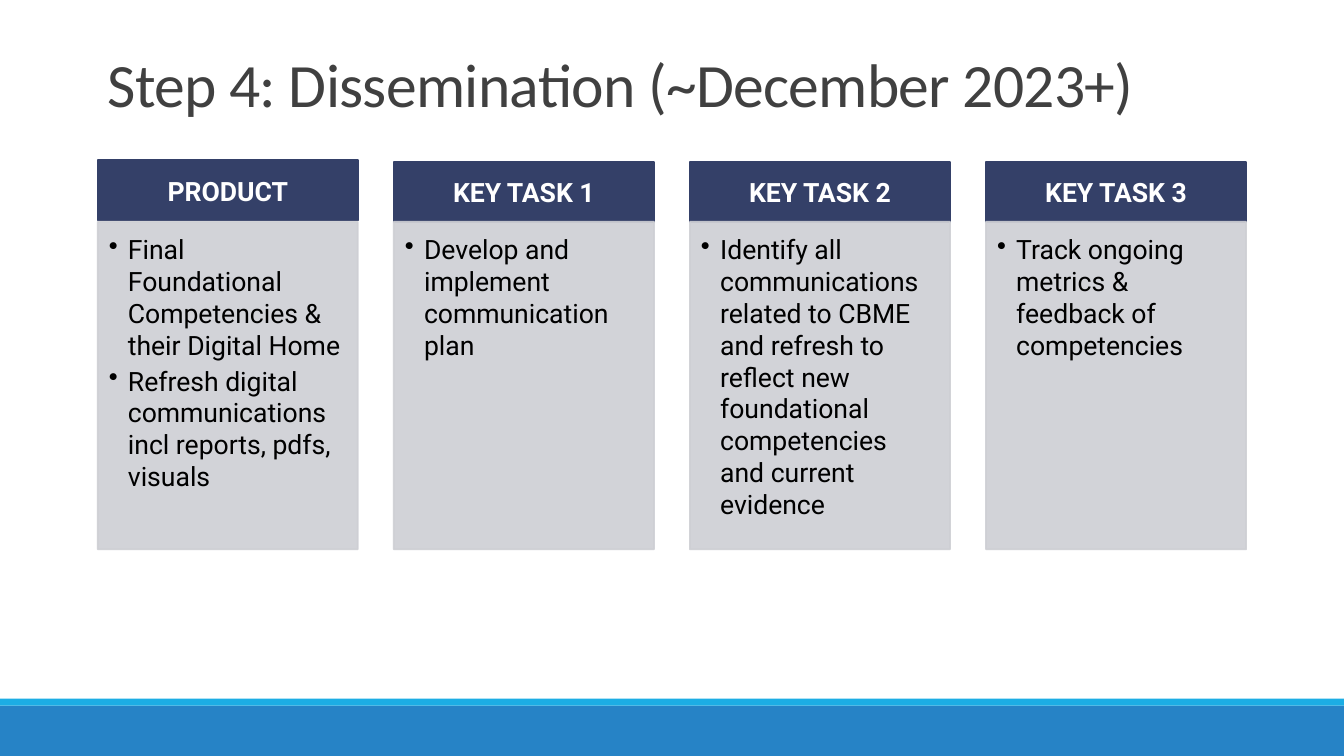
from lxml.etree import SubElement
from pptx import Presentation
from pptx.dml.color import RGBColor
from pptx.enum.shapes import MSO_SHAPE
from pptx.enum.text import MSO_ANCHOR, PP_ALIGN
from pptx.oxml.ns import qn
from pptx.util import Pt


def paint(fill, color, opacity=100):
    fill.solid()
    fill.fore_color.rgb = RGBColor.from_string(color)
    if opacity < 100:
        color_element = fill._xPr.find(qn("a:solidFill"))[0]
        SubElement(color_element, qn("a:alpha"), val=str(opacity * 1000))


def write_text(shape, lines, size=19, font="Roboto", color="000000", bold=False,
               align=PP_ALIGN.LEFT, anchor=MSO_ANCHOR.TOP, insets=(7.2, 3.6, 7.2, 3.6),
               line_spacing=1.0, space_after=0, bullet_indent=0, tracking=0):
    frame = shape.text_frame
    frame.word_wrap = True
    frame.vertical_anchor = anchor
    frame.margin_left, frame.margin_top, frame.margin_right, frame.margin_bottom = map(Pt, insets)
    for index, line in enumerate(lines):
        paragraph = frame.add_paragraph() if index else frame.paragraphs[0]
        paragraph.alignment = align
        paragraph.line_spacing = line_spacing
        paragraph.space_after = Pt(space_after)
        if bullet_indent:
            properties = paragraph._p.get_or_add_pPr()
            properties.set("marL", str(Pt(bullet_indent)))
            properties.set("indent", str(-Pt(bullet_indent)))
            SubElement(properties, qn("a:buChar"), char="•")
        run = paragraph.add_run()
        run.text = line
        run.font.size = Pt(size)
        run.font.name = font
        run.font.bold = bold
        paint(run.font.fill, color)
        if tracking:
            run._r.get_or_add_rPr().set("spc", str(int(tracking * 100)))


presentation = Presentation()
presentation.slide_width = Pt(960)
presentation.slide_height = Pt(540)
slide = presentation.slides.add_slide(presentation.slide_layouts[6])

for top, height, color in [(504, 36, "2683C6"), (499, 5, "1CADE4")]:
    band = slide.shapes.add_shape(MSO_SHAPE.RECTANGLE, 0, Pt(top), Pt(960), Pt(height))
    band.shadow.inherit = False
    paint(band.fill, color)
    band.line.fill.background()

columns = [
    ("PRODUCT", 114.5, ["Final Foundational Competencies & their Digital Home",
                        "Refresh digital communications incl reports, pdfs, visuals"]),
    ("KEY TASK 1", 115.5, ["Develop and implement communication plan"]),
    ("KEY TASK 2", 115.5, ["Identify all communications related to CBME and refresh to reflect "
                           "new foundational competencies and current evidence"]),
    ("KEY TASK 3", 115.5, ["Track ongoing metrics & feedback of competencies"]),
]
column_left, column_pitch, column_width = 69.8, 211.5, 185.8
header_height, body_top, body_height = 43, 158.4, 234

header_format = dict(color="FFFFFF", bold=True, align=PP_ALIGN.CENTER,
                     anchor=MSO_ANCHOR.MIDDLE, insets=(10.8, 5.8, 10.8, 5.8))
body_format = dict(insets=(7.9, 7.9, 10.8, 12.2), space_after=2.85, bullet_indent=13.7)

for index, (heading, header_top, tasks) in enumerate(columns):
    left = column_left + index * column_pitch
    for top, height, color, opacity, lines, text_format in [
        (header_top, header_height, "344068", 100, [heading], header_format),
        (body_top, body_height, "CECFD4", 90, tasks, body_format),
    ]:
        card = slide.shapes.add_shape(MSO_SHAPE.RECTANGLE, Pt(left), Pt(top),
                                      Pt(column_width), Pt(height))
        card.shadow.inherit = False
        paint(card.fill, color, opacity)
        paint(card.line.fill, color, opacity)
        card.line.width = Pt(1.25)
        write_text(card, lines, **text_format)

title = slide.shapes.add_textbox(Pt(69.8), 0, Pt(849), Pt(89.3))
write_text(title, ["Step 4: Dissemination (~December 2023+)"], size=44, font="Calibri",
           color="404040", anchor=MSO_ANCHOR.BOTTOM, line_spacing=0.85, tracking=-0.5)

presentation.save("out.pptx")
